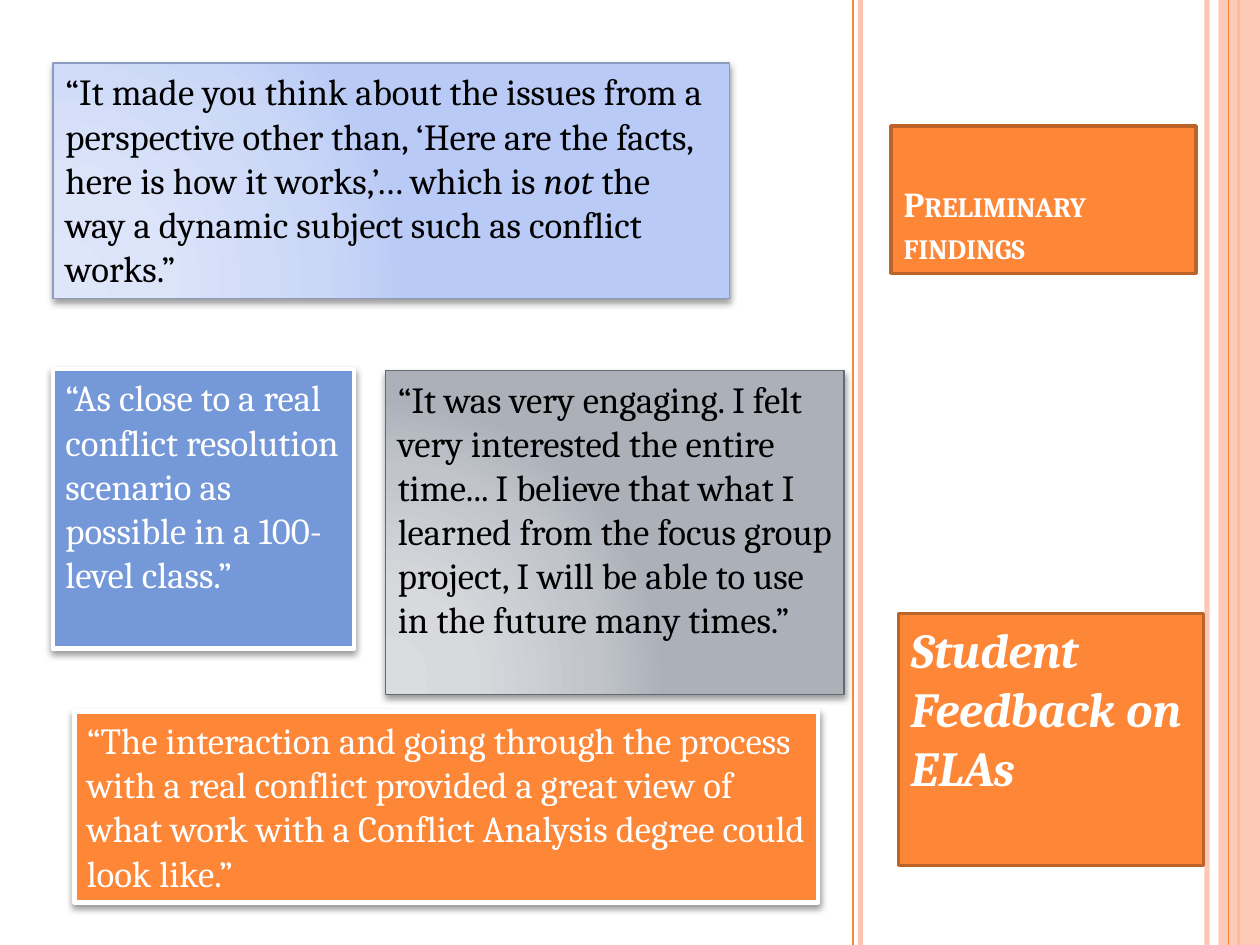
from lxml import etree
from pptx import Presentation
from pptx import util as u
from pptx.dml.color import RGBColor
from pptx.enum import shapes, text
from pptx.oxml import parse_xml
from pptx.oxml.ns import nsdecls, qn

HUES = {"peach": "FEC3AE", "orange": "FE8637", "rust": "BC6329",
        "blue": "7598D9", "navy": "8D9CBF", "slate": "636A74",
        "white": "FFFFFF", "black": "000000"}
FONT = "Cambria"
WIDE, HIGH = 25.4, 19.05

# Content: centimetres, points, opacity in percent
RULES = [(24.33, "peach", 3, 93), (17.35, "peach", 3, 100),
         (17.2, "orange", 1, 100), (24.97, "orange", 1.5, 100)]
EDGE = (24.77, "orange", 0.75, 100)
BAND = (24.56, 0, 0.84, HIGH)
TITLE = ("Preliminary findings", (17.96, 2.54, 6.15, 2.97))
TOPIC = ("Student Feedback on ELAs", (18.11, 12.37, 6.15, 5.08))

# Gradient stops: (position in percent, colour)
SKY = [(0, "DEE6FA"), (30, "DBE4F9"), (75, "CAD7F7"), (100, "B8CAF5")]
STEEL = [(0, "DADCE0"), (30, "D7D9DD"), (75, "C1C5CB"), (100, "ABB0B9")]

# Quotes: runs (text, italic), place, fill, line, line width, text colour
QUOTES = [
    ([("“It made you think about the issues from a perspective other than, "
       "‘Here are the facts, here is how it works,’… which is ", False),
      ("not ", True),
      ("the way a dynamic subject such as conflict works.”", False)],
     (1.07, 1.27, 13.64, 4.75), SKY, "navy", 1, "black"),
    ([("“The interaction and going through the process with a real conflict "
       "provided a great view of what work with a Conflict Analysis degree "
       "could look like.”", False)],
     (1.5, 14.35, 14.99, 3.84), "orange", "white", 2.75, "white"),
    ([("“As close to a real conflict resolution scenario as possible in a "
       "100-level class.”", False)],
     (1.07, 7.44, 6.07, 5.64), "blue", "white", 2.75, "white"),
    ([("“It was very engaging. I felt very interested the entire time... "
       "I believe that what I learned from the focus group project, I will "
       "be able to use in the future many times.”", False)],
     (7.77, 7.47, 9.25, 6.53), STEEL, "slate", 1, "black"),
]


def hue(name):
    return RGBColor.from_string(HUES[name])


def put(obj, **vals):
    for key, val in vals.items():
        setattr(obj, key, val)


def fade(node, part):
    """Make the colour under node partly clear."""
    tint = next(node.iter(qn("a:srgbClr")))
    etree.SubElement(tint, qn("a:alpha"), val=str(part * 1000))


def paint(shape, fill, line=None, size=0):
    shape.fill.solid()
    if isinstance(fill, str):
        shape.fill.fore_color.rgb = hue(fill)
    else:
        stops = "".join(f'<a:gs pos="{pos * 1000}"><a:srgbClr val="{tone}"/></a:gs>'
                        for pos, tone in fill)
        grad = parse_xml(
            f'<a:gradFill {nsdecls("a")} rotWithShape="1"><a:gsLst>{stops}</a:gsLst>'
            '<a:path path="circle"><a:fillToRect l="5000" t="100000" '
            'r="120000" b="10000"/></a:path></a:gradFill>')
        flat = shape._element.spPr.find(qn("a:solidFill"))
        flat.getparent().replace(flat, grad)
    if line:
        shape.line.color.rgb = hue(line)
        shape.line.width = u.Pt(size)
    else:
        shape.line.fill.background()


def box(place):
    shape = slide.shapes.add_shape(shapes.MSO_SHAPE.RECTANGLE, *map(u.Cm, place))
    shape.shadow.inherit = False
    return shape


def rule(left, tone, size, part):
    line = slide.shapes.add_connector(shapes.MSO_CONNECTOR.STRAIGHT,
                                      u.Cm(left), 0, u.Cm(left), u.Cm(HIGH))
    line.line.color.rgb = hue(tone)
    line.line.width = u.Pt(size)
    props = line._element.spPr
    if part < 100:
        fade(props, part)
    etree.SubElement(props, qn("a:effectLst"))


def write(shape, runs, size, tone, anchor="TOP", bold=False):
    frame = shape.text_frame
    put(frame, word_wrap=True, auto_size=text.MSO_AUTO_SIZE.NONE,
        vertical_anchor=getattr(text.MSO_ANCHOR, anchor))
    para = frame.paragraphs[0]
    para.alignment = text.PP_ALIGN.LEFT
    for words, slant in runs:
        run = para.add_run()
        run.text = words
        put(run.font, name=FONT, size=u.Pt(size), bold=bold, italic=slant)
        run.font.color.rgb = hue(tone)
    return para


def shade(shape):
    glow = parse_xml(
        f'<a:outerShdw {nsdecls("a")} blurRad="{u.Pt(4)}" dist="{u.Pt(2)}" '
        'dir="5400000" rotWithShape="0"><a:srgbClr val="000000"/></a:outerShdw>')
    fade(glow, 40)
    shape._element.spPr.find(qn("a:effectLst")).append(glow)


deck = Presentation()
put(deck, slide_width=u.Cm(WIDE), slide_height=u.Cm(HIGH))
slide = deck.slides.add_slide(deck.slide_layouts[5])

# Stripes on the right
for item in RULES:
    rule(*item)
band = box(BAND)
paint(band, "peach")
fade(band._element.spPr, 87)
rule(*EDGE)

# Topic panel
words, place = TOPIC
topic = box(place)
paint(topic, "orange", "rust", 2)
para = write(topic, [(words, True)], 28, "white", bold=True)
put(para, space_before=u.Pt(4), space_after=u.Pt(10))

# Title
words, place = TITLE
title = slide.shapes.title
put(title, **dict(zip(("left", "top", "width", "height"), map(u.Cm, place))))
paint(title, "orange", "rust", 2)
para = write(title, [(words, False)], 20, "white", "BOTTOM", True)
para.runs[0].font._element.set("cap", "small")

# Student quotes
for runs, place, fill, line, size, tone in QUOTES:
    quote = box(place)
    paint(quote, fill, line, size)
    shade(quote)
    write(quote, runs, 21, tone)
    quote.text_frame.auto_size = text.MSO_AUTO_SIZE.SHAPE_TO_FIT_TEXT

deck.save("out.pptx")
